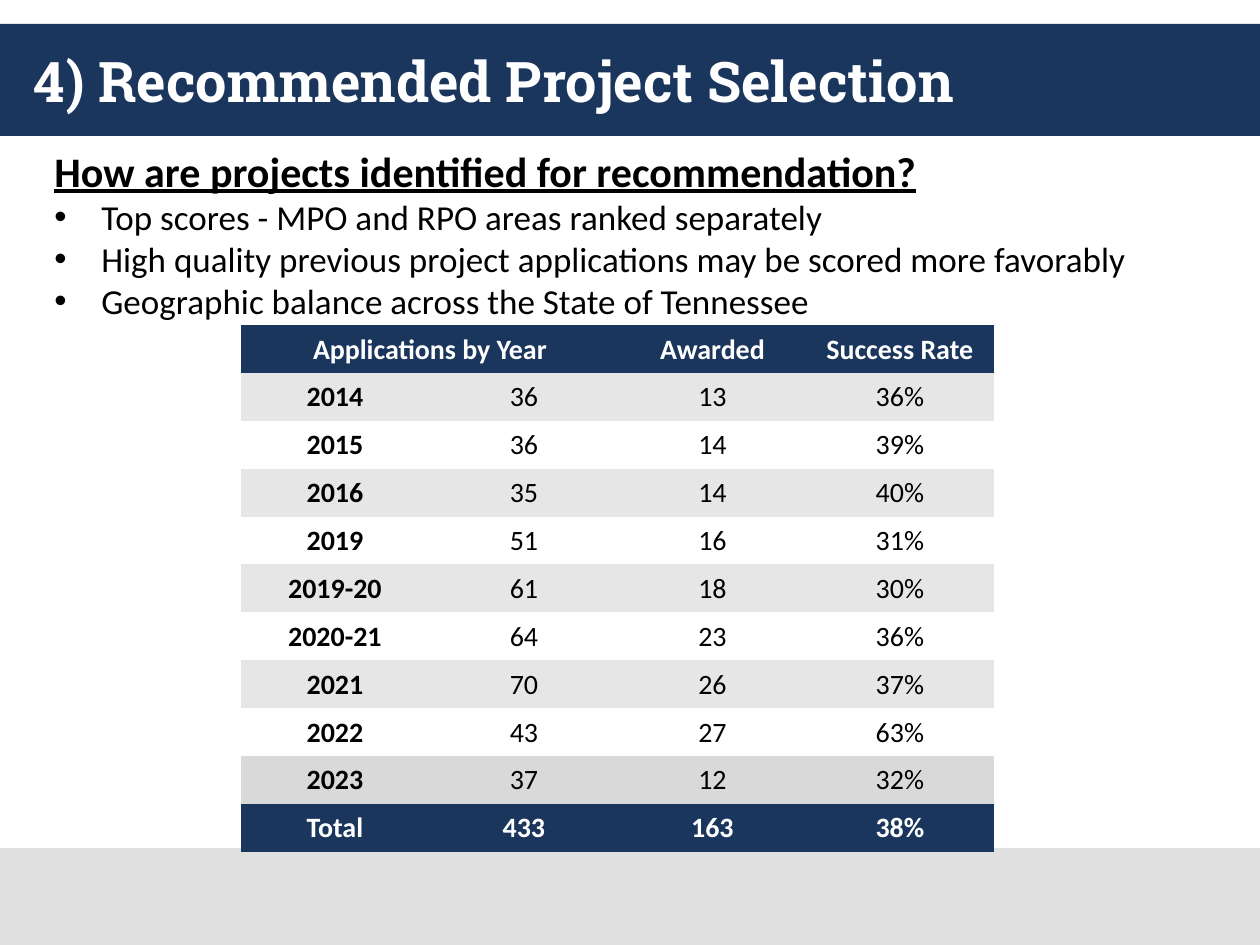
from lxml import etree
from pptx import Presentation
from pptx import util as u
from pptx.dml.color import RGBColor
from pptx.enum import shapes, text
from pptx.oxml.ns import qn

SCALE = 914400 / 126  # EMU per px
COLORS = {"navy": "1B365D", "footer": "E0E0E0", "white": "FFFFFF",
          "black": "000000", "stripe": "E7E6E6", "latest": "D9D9D9"}
NO_STYLE = "{2D5ABB26-0587-4C30-8999-92F81FD0307C}"

BULLETS = [
    "Top scores - MPO and RPO areas ranked separately",
    "High quality previous project applications may be scored more favorably",
    "Geographic balance across the State of Tennessee",
]
COLUMNS = [188, 190, 187, 188]
HEADER = ["Applications by Year", "", "Awarded", "Success Rate"]
YEARS = [
    ["2014", "36", "13", "36%"],
    ["2015", "36", "14", "39%"],
    ["2016", "35", "14", "40%"],
    ["2019", "51", "16", "31%"],
    ["2019-20", "61", "18", "30%"],
    ["2020-21", "64", "23", "36%"],
    ["2021", "70", "26", "37%"],
    ["2022", "43", "27", "63%"],
    ["2023", "37", "12", "32%"],
]
TOTAL = ["Total", "433", "163", "38%"]


def px(length):
    return u.Emu(round(length * SCALE))


def rgb(name):
    return RGBColor.from_string(COLORS[name])


def set_font(font, size, color="black", **values):
    values = {"name": "Calibri", "size": u.Pt(size), "bold": False, **values}
    for name, value in values.items():
        setattr(font, name, value)
    font.color.rgb = rgb(color)


def add_bullet(para, indent):
    props = para._p.get_or_add_pPr()
    props.set("marL", str(px(indent)))
    props.set("indent", str(-px(indent)))
    etree.SubElement(props, qn("a:buFont")).set("typeface", "Arial")
    etree.SubElement(props, qn("a:buChar")).set("char", "•")


def add_band(page, top, height, color):
    """Full-width band, placed behind the title."""
    band = page.shapes.add_shape(shapes.MSO_SHAPE.RECTANGLE,
                                 0, px(top), px(1260), px(height))
    band.shadow.inherit = False
    band.fill.solid()
    band.fill.fore_color.rgb = rgb(color)
    band.line.fill.background()
    page.shapes.title.element.addprevious(band.element)


def set_title(page, words):
    title = page.shapes.title
    title.left, title.top, title.width, title.height = map(px, (21, 24, 1218, 113))
    frame = title.text_frame
    frame.text = words
    frame.auto_size = text.MSO_AUTO_SIZE.NONE
    frame.vertical_anchor = text.MSO_ANCHOR.MIDDLE
    para = frame.paragraphs[0]
    para.alignment = text.PP_ALIGN.LEFT
    set_font(para.font, 32, "white", name="Roboto Slab", bold=True)


def add_criteria(page, heading, bullets):
    box = page.shapes.add_textbox(px(42), px(139), px(1176), px(190))
    frame = box.text_frame
    frame.word_wrap = True
    frame.auto_size = text.MSO_AUTO_SIZE.SHAPE_TO_FIT_TEXT
    para = frame.paragraphs[0]
    para.text = heading
    set_font(para.runs[0].font, 24, bold=True, underline=True)
    for bullet in bullets:
        para = frame.add_paragraph()
        para.text = bullet
        add_bullet(para, 47)
        set_font(para.runs[0].font, 20)


def fill_cell(cell, words, fill, color, bold):
    cell.vertical_anchor = text.MSO_ANCHOR.MIDDLE
    cell.margin_left = cell.margin_right = cell.margin_top = px(1)
    cell.margin_bottom = 0
    if fill:
        cell.fill.solid()
        cell.fill.fore_color.rgb = rgb(fill)
    else:
        cell.fill.background()
    para = cell.text_frame.paragraphs[0]
    para.text = words
    para.alignment = text.PP_ALIGN.CENTER
    set_font(para.font, 16, color, bold=bold)
    for span in para.runs:
        set_font(span.font, 16, color, bold=bold)


def add_results(page):
    rows = [HEADER, *YEARS, TOTAL]
    table = page.shapes.add_table(len(rows), len(COLUMNS), px(241), px(325),
                                  px(sum(COLUMNS)), px(527)).table
    table._tbl.tblPr.find(qn("a:tableStyleId")).text = NO_STYLE
    table.horz_banding = False
    for column, width in zip(table.columns, COLUMNS):
        column.width = px(width)
    fills = ["navy"] + ["stripe", None] * 4 + ["latest", "navy"]
    for r, (row, fill) in enumerate(zip(rows, fills)):
        dark = fill == "navy"
        for c, words in enumerate(row):
            fill_cell(table.cell(r, c), words, fill,
                      "white" if dark else "black", dark or c == 0)
    table.cell(0, 0).merge(table.cell(0, 1))


def main():
    deck = Presentation()
    deck.slide_width, deck.slide_height = px(1260), px(945)
    page = deck.slides.add_slide(deck.slide_layouts[5])
    add_band(page, 24, 112, "navy")
    add_band(page, 848, 97, "footer")
    set_title(page, "4) Recommended Project Selection")
    add_criteria(page, "How are projects identified for recommendation?", BULLETS)
    add_results(page)
    deck.save("out.pptx")


if __name__ == "__main__":
    main()
